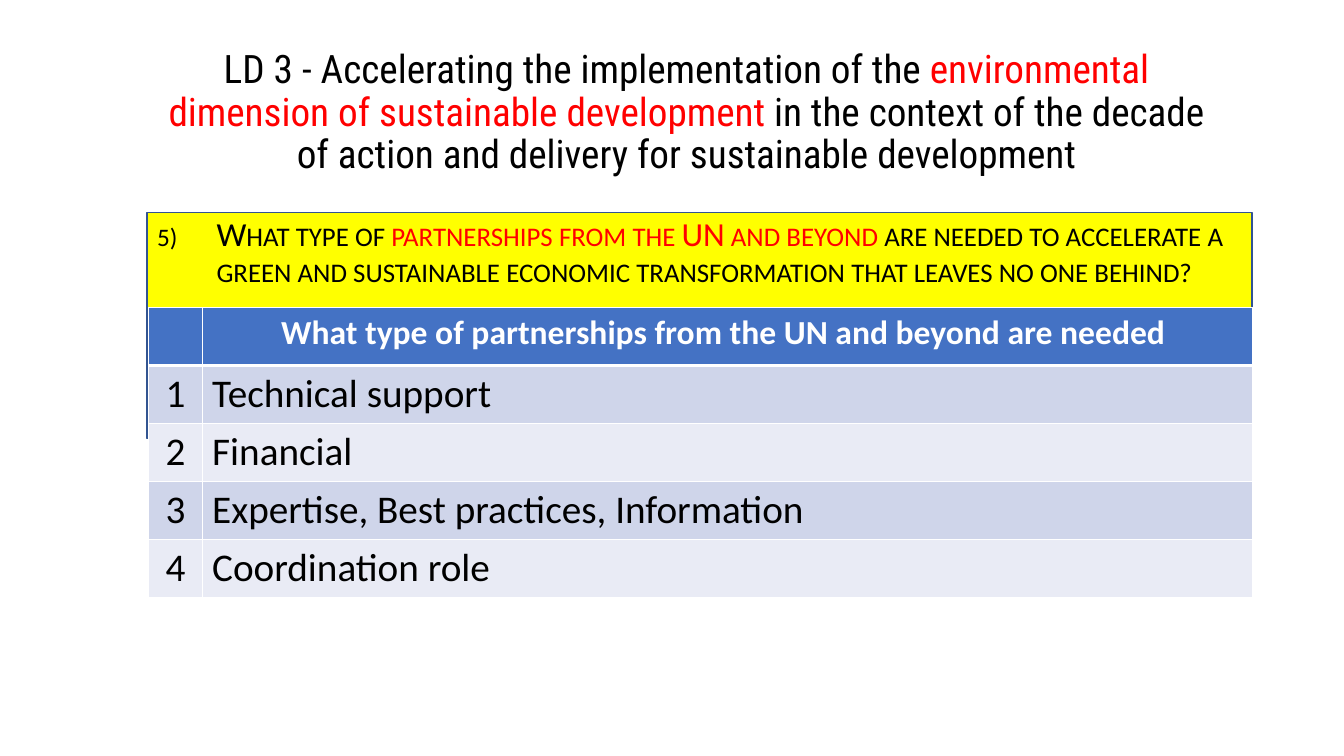
"""Build the slide on partnerships for a green economic transformation."""
from lxml import etree
from pptx import Presentation
from pptx.dml.color import RGBColor
from pptx.enum.shapes import MSO_SHAPE
from pptx.enum.text import MSO_ANCHOR, MSO_AUTO_SIZE, PP_ALIGN
from pptx.oxml.ns import qn
from pptx.util import Pt

RECTANGLE = MSO_SHAPE.RECTANGLE
MIDDLE = MSO_ANCHOR.MIDDLE
TOP = MSO_ANCHOR.TOP
NO_FIT = MSO_AUTO_SIZE.NONE
CENTER = PP_ALIGN.CENTER
LEFT = PP_ALIGN.LEFT

BLACK = RGBColor(0x00, 0x00, 0x00)
WHITE = RGBColor(0xFF, 0xFF, 0xFF)
RED = RGBColor(0xFF, 0x00, 0x00)
YELLOW = RGBColor(0xFF, 0xFF, 0x00)
NAVY = RGBColor(0x32, 0x54, 0x91)
HEADER_BLUE = RGBColor(0x44, 0x72, 0xC4)
BANDS = (RGBColor(0xCF, 0xD5, 0xEA), RGBColor(0xE9, 0xEB, 0xF5))

TITLE_FONT = "Roboto Condensed"
BODY_FONT = "Calibri"
ROW_HEIGHT = Pt(41.4)
COLUMN_WIDTHS = (Pt(38.2), Pt(750))

TITLE = (
    ("LD 3 - Accelerating the implementation of the ", BLACK),
    ("environmental dimension of sustainable development ", RED),
    ("in the context of the decade of action and delivery for sustainable development", BLACK),
)
QUESTION = (
    ("What type of ", BLACK),
    ("partnerships from the UN and beyond ", RED),
    ("are needed to accelerate a green and sustainable economic transformation "
     "that leaves no one behind?", BLACK),
)
HEADING = "What type of partnerships from the UN and beyond are needed "
PARTNERSHIPS = (
    "Technical support",
    "Financial",
    "Expertise, Best practices, Information",
    "Coordination role",
)


def add_spans(para, spans, font, size, bold=False):
    """Add coloured runs to a paragraph and return them."""
    added = []
    for text, color in spans:
        span = para.add_run()
        span.text = text
        span.font.name = font
        span.font.size = Pt(size)
        span.font.bold = bold
        span.font.color.rgb = color
        added.append(span)
    return added


def set_title(page):
    """Place and fill the title placeholder."""
    title = page.shapes.title
    title.left, title.top, title.width, title.height = Pt(105.1), Pt(28.8), Pt(770.4), Pt(104.4)
    frame = title.text_frame
    frame.auto_size = NO_FIT
    frame.word_wrap = True
    frame.vertical_anchor = MIDDLE
    para = frame.paragraphs[0]
    para.alignment = CENTER
    para.line_spacing = 0.9
    add_spans(para, TITLE, TITLE_FONT, 28)


def add_panel(page):
    """Add the yellow panel behind the question."""
    panel = page.shapes.add_shape(RECTANGLE, Pt(105.1), Pt(151.9), Pt(789.1), Pt(161.3))
    panel.shadow.inherit = False
    panel.fill.solid()
    panel.fill.fore_color.rgb = YELLOW
    panel.line.color.rgb = NAVY
    panel.line.width = Pt(1)


def number_paragraph(para, start, indent):
    """Give a paragraph a hanging number of the form 5)."""
    props = para._p.get_or_add_pPr()
    props.set("marL", str(indent))
    props.set("indent", str(-indent))
    etree.SubElement(props, qn("a:buSzPct"), val="75000")
    etree.SubElement(props, qn("a:buFont"), typeface="+mj-lt")
    etree.SubElement(props, qn("a:buAutoNum"), type="arabicParenR", startAt=str(start))


def add_question(page):
    """Add the numbered question in small capitals."""
    box = page.shapes.add_textbox(Pt(105.1), Pt(151.9), Pt(789.1), Pt(383.8))
    frame = box.text_frame
    frame.word_wrap = True
    frame.auto_size = NO_FIT
    frame.vertical_anchor = TOP
    para = frame.paragraphs[0]
    para.alignment = LEFT
    para.line_spacing = 0.9
    para.space_before = Pt(10)
    number_paragraph(para, 5, Pt(42.5))
    for span in add_spans(para, QUESTION, BODY_FONT, 24):
        span._r.get_or_add_rPr().set("cap", "small")


def set_borders(cell, bottom):
    """Draw white cell borders, with a given bottom width."""
    props = cell._tc.get_or_add_tcPr()
    for side, width in (("L", 1), ("R", 1), ("T", 1), ("B", bottom)):
        line = etree.SubElement(props, qn(f"a:ln{side}"), w=str(Pt(width)))
        fill = etree.SubElement(line, qn("a:solidFill"))
        etree.SubElement(fill, qn("a:srgbClr"), val=str(WHITE))


def fill_cell(cell, text, fill, color, size, alignment, bold=False, bottom=1):
    """Style one table cell and write its text."""
    set_borders(cell, bottom)
    cell.fill.solid()
    cell.fill.fore_color.rgb = fill
    para = cell.text_frame.paragraphs[0]
    para.alignment = alignment
    if text:
        add_spans(para, ((text, color),), BODY_FONT, size, bold)


def add_partnership_table(page):
    """Add the table of numbered partnership types."""
    rows = len(PARTNERSHIPS) + 1
    table = page.shapes.add_table(
        rows, 2, Pt(106.2), Pt(219.6), sum(COLUMN_WIDTHS), rows * ROW_HEIGHT).table
    for column, width in zip(table.columns, COLUMN_WIDTHS):
        column.width = width
    for row in table.rows:
        row.height = ROW_HEIGHT
    for column, text in enumerate(("", HEADING)):
        fill_cell(table.cell(0, column), text, HEADER_BLUE, WHITE, 24, CENTER, True, 3)
    for number, partnership in enumerate(PARTNERSHIPS, 1):
        band = BANDS[(number - 1) % 2]
        fill_cell(table.cell(number, 0), str(number), band, BLACK, 28, CENTER)
        fill_cell(table.cell(number, 1), partnership, band, BLACK, 28, LEFT)


def main():
    """Build and save the deck."""
    deck = Presentation()
    deck.slide_width, deck.slide_height = Pt(960), Pt(540)
    page = deck.slides.add_slide(deck.slide_layouts[5])
    add_panel(page)
    add_question(page)
    set_title(page)
    add_partnership_table(page)
    deck.save("out.pptx")


if __name__ == "__main__":
    main()
